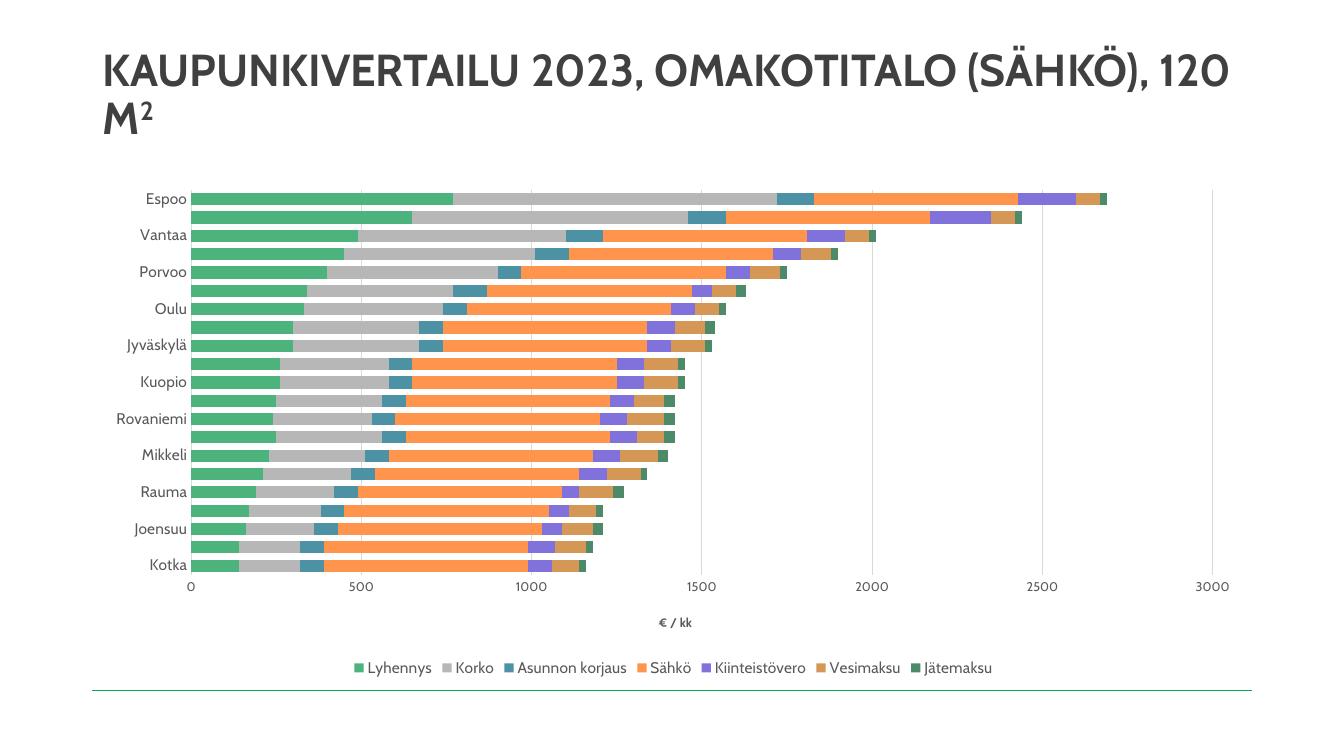
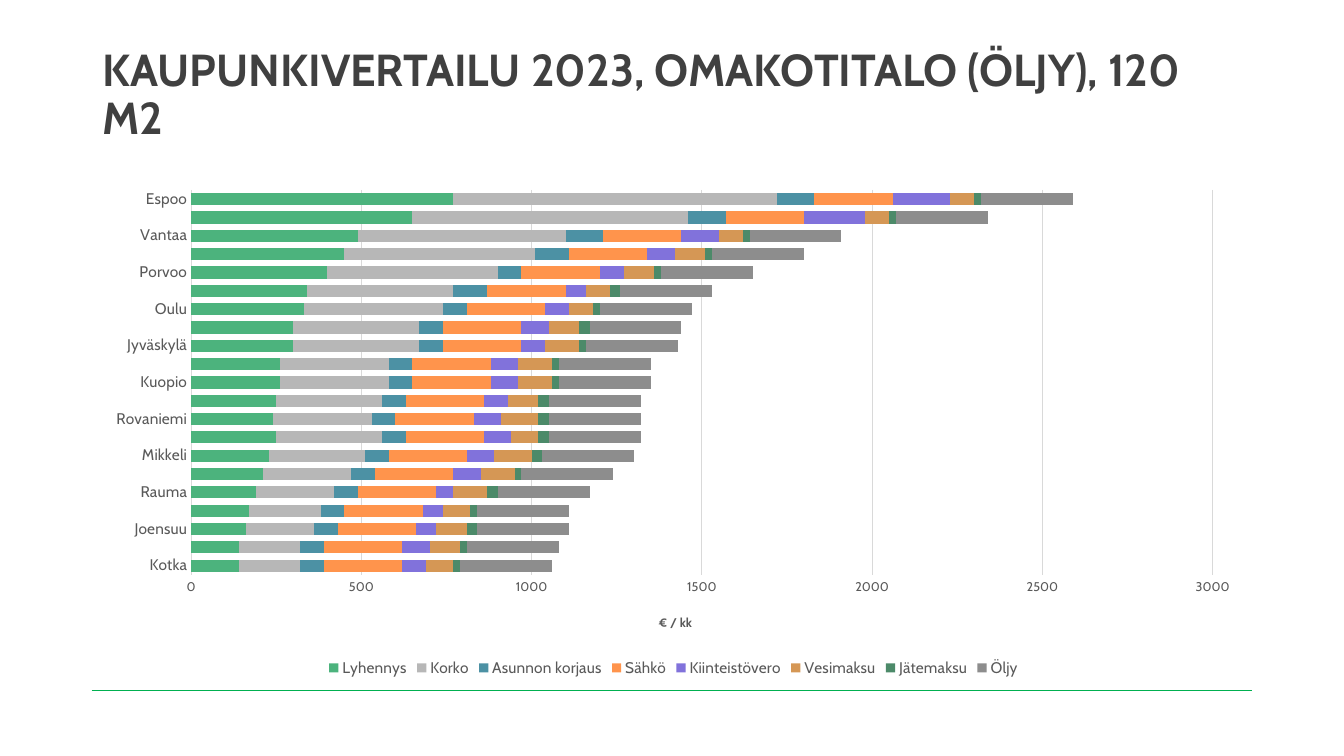
import pptx
import pptx.chart.data
import pptx.dml.color
import pptx.enum.chart
import pptx.enum.shapes
import pptx.enum.text
import pptx.oxml
import pptx.oxml.ns
import pptx.util

Inches = pptx.util.Inches
Pt = pptx.util.Pt
RGBColor = pptx.dml.color.RGBColor
qn = pptx.oxml.ns.qn

FONT = "Cabin"
TITLE_COLOR = RGBColor(0x40, 0x40, 0x40)
LABEL_COLOR = RGBColor(0x59, 0x59, 0x59)
GRID_COLOR = RGBColor(0xD9, 0xD9, 0xD9)
RULE_COLOR = RGBColor(0x00, 0xB0, 0x50)
SERIES_COLORS = {
    "Lyhennys": RGBColor(0x4C, 0xB3, 0x7D),
    "Korko": RGBColor(0xB7, 0xB7, 0xB7),
    "Asunnon korjaus": RGBColor(0x4C, 0x91, 0xA4),
    "Sähkö": RGBColor(0xFF, 0x94, 0x4C),
    "Kiinteistövero": RGBColor(0x81, 0x72, 0xDB),
    "Vesimaksu": RGBColor(0xD5, 0x97, 0x55),
    "Jätemaksu": RGBColor(0x4C, 0x8A, 0x69),
    "Öljy": RGBColor(0x8D, 0x8D, 0x8D),
}

CITIES = [
    "Kotka", "Kouvola", "Joensuu", "Pori", "Rauma", "Lappeenranta", "Mikkeli",
    "Lahti", "Rovaniemi", "Vaasa", "Kuopio", "Hämeenlinna", "Jyväskylä", "Seinäjoki",
    "Oulu", "Turku", "Porvoo", "Tampere", "Vantaa", "Helsinki", "Espoo",
]
LOAN_AND_REPAIR = {
    "Lyhennys": [140, 140, 160, 170, 190, 210, 230, 250, 240, 250, 260,
                 260, 300, 300, 330, 340, 400, 450, 490, 650, 770],
    "Korko": [180, 180, 200, 210, 230, 260, 280, 310, 290, 310, 320,
              320, 370, 370, 410, 430, 500, 560, 610, 810, 950],
    "Asunnon korjaus": [70] * 15 + [100, 70, 100, 110, 110, 110],
}
TAX_AND_FEES = {
    "Kiinteistövero": [70, 80, 60, 60, 50, 80, 80, 80, 80, 70, 80,
                       80, 70, 80, 70, 60, 70, 80, 110, 180, 170],
    "Vesimaksu": [80, 90, 90, 80, 100, 100, 110, 80, 110, 90, 100,
                  100, 100, 90, 70, 70, 90, 90, 70, 70, 70],
    "Jätemaksu": [20, 20, 30, 20, 30, 20, 30, 30, 30, 30, 20,
                  20, 20, 30, 20, 30, 20, 20, 20, 20, 20],
}
PAGES = [
    {
        "title": [("KAUPUNKIVERTAILU 2023, OMAKOTITALO (SÄHKÖ), 120 ", {}),
                  ("M", {"spc": "-50"}),
                  ("2", {"spc": "-50", "baseline": "30000"})],
        "electricity": 600,
        "heating": {},
    },
    {
        "title": [("KAUPUNKIVERTAILU 2023, OMAKOTITALO (ÖLJY), 120 M2", {})],
        "electricity": 230,
        "heating": {"Öljy": 270},
    },
]


def set_font(font, size, color, bold=False):
    for name, value in {"name": FONT, "size": Pt(size), "bold": bold}.items():
        setattr(font, name, value)
    font.color.rgb = color


def set_layout(parent, inner=False, **fractions):
    layout = parent.find(qn("c:layout"))
    if layout is None:
        layout = pptx.oxml.parse_xml(f"<c:layout {pptx.oxml.ns.nsdecls('c')}/>")
        parent.insert(0, layout)
    manual = layout.makeelement(qn("c:manualLayout"), {})
    layout.append(manual)
    settings = {"layoutTarget": "inner"} if inner else {}
    settings.update(xMode="edge", yMode="edge", **fractions)
    for name, value in settings.items():
        manual.append(manual.makeelement(qn(f"c:{name}"), {"val": str(value)}))


def add_rule(page):
    rule = page.shapes.add_connector(
        pptx.enum.shapes.MSO_CONNECTOR.STRAIGHT,
        Inches(0.91), Inches(6.85), Inches(12.42), Inches(6.85))
    rule.line.color.rgb = RULE_COLOR
    rule.line.width = Pt(1)
    properties = rule._element.spPr
    properties.append(properties.makeelement(qn("a:effectLst"), {}))


def add_title(page, spans):
    box = page.shapes.add_textbox(Inches(0.92), Inches(0.4), Inches(11.5), Inches(1.1))
    frame = box.text_frame
    frame.word_wrap = True
    frame.vertical_anchor = pptx.enum.text.MSO_ANCHOR.MIDDLE
    para = frame.paragraphs[0]
    para.line_spacing = 0.9
    for text, attributes in spans:
        span = para.add_run()
        span.text = text
        set_font(span.font, 32, TITLE_COLOR, True)
        for name, value in attributes.items():
            span._r.get_or_add_rPr().set(name, value)


def style_axes(chart):
    cities, costs = chart.category_axis, chart.value_axis
    for axis, size in ((cities, 11), (costs, 9)):
        axis.major_tick_mark = pptx.enum.chart.XL_TICK_MARK.NONE
        axis.minor_tick_mark = pptx.enum.chart.XL_TICK_MARK.NONE
        set_font(axis.tick_labels.font, size, LABEL_COLOR)
    cities.has_major_gridlines = False
    costs.has_major_gridlines = True
    for line in (cities.format.line, costs.major_gridlines.format.line):
        line.color.rgb = GRID_COLOR
        line.width = Pt(0.75)
    costs.format.line.fill.background()
    costs.minimum_scale, costs.maximum_scale, costs.major_unit = 0, 3000, 500
    costs.tick_labels.number_format = "0"
    costs.tick_labels.number_format_is_linked = False
    para = costs.axis_title.text_frame.paragraphs[0]
    span = para.add_run()
    span.text = "€ / kk"
    set_font(span.font, 9, LABEL_COLOR, True)
    set_layout(costs.axis_title._element, x=0.485, y=0.86)


def add_cost_chart(page, costs):
    data = pptx.chart.data.CategoryChartData(number_format="0")
    data.categories = CITIES
    for name, values in costs.items():
        data.add_series(name, values)
    chart = page.shapes.add_chart(
        pptx.enum.chart.XL_CHART_TYPE.BAR_STACKED,
        Inches(0.93), Inches(1.78), Inches(11.5), Inches(4.98), data).chart
    set_font(chart.font, 10, RGBColor(0, 0, 0))
    chart.has_title = False
    chart.has_legend = True
    chart.legend.position = pptx.enum.chart.XL_LEGEND_POSITION.BOTTOM
    chart.legend.include_in_layout = False
    set_font(chart.legend.font, 11, LABEL_COLOR)
    plot = chart.plots[0]
    plot.gap_width, plot.overlap, plot.vary_by_categories = 50, 100, False
    for series in plot.series:
        series.format.fill.solid()
        series.format.fill.fore_color.rgb = SERIES_COLORS[series.name]
        series.invert_if_negative = False
    style_axes(chart)
    set_layout(chart._chartSpace.chart.plotArea, True, x=0.084, y=0.021, w=0.881, h=0.767)


def main():
    deck = pptx.Presentation()
    deck.slide_width, deck.slide_height = Inches(13.33), Inches(7.5)
    for content in PAGES:
        page = deck.slides.add_slide(deck.slide_layouts[6])
        add_rule(page)
        add_title(page, content["title"])
        energy = {"Sähkö": content["electricity"]}
        flat_costs = [{name: [cost] * len(CITIES) for name, cost in group.items()}
                      for group in (energy, content["heating"])]
        add_cost_chart(page, {**LOAN_AND_REPAIR, **flat_costs[0],
                              **TAX_AND_FEES, **flat_costs[1]})
    deck.save("out.pptx")


if __name__ == "__main__":
    main()
